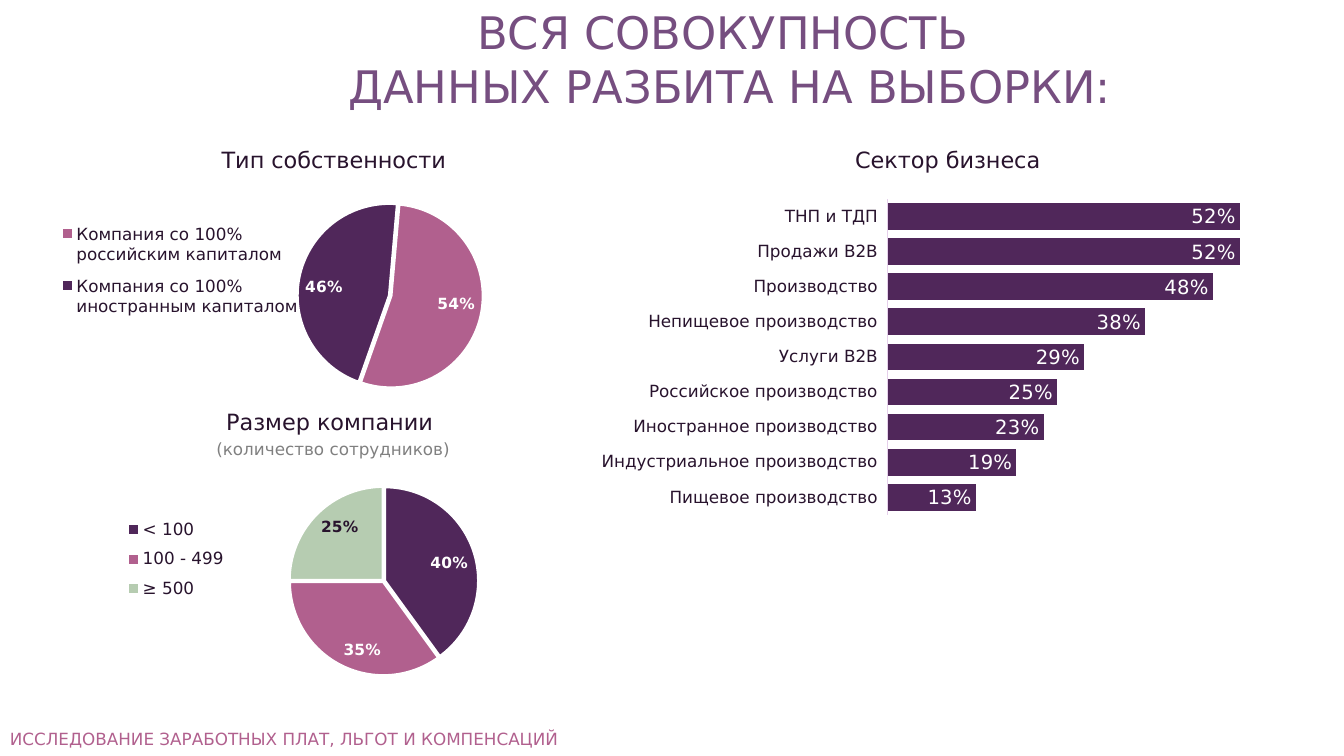
from pptx import Presentation
from pptx.chart.data import CategoryChartData
from pptx.dml.color import RGBColor
from pptx.enum.chart import XL_CHART_TYPE, XL_LABEL_POSITION, XL_LEGEND_POSITION, XL_TICK_LABEL_POSITION, XL_TICK_MARK
from pptx.enum.text import PP_ALIGN
from pptx.oxml import parse_xml
from pptx.oxml.ns import nsdecls
from pptx.util import Pt

FONT = "DejaVu Sans"
COLORS = {
    "title": "764E80",
    "text": "28132D",
    "note": "808080",
    "plum": "50275A",
    "rose": "B1608E",
    "sage": "B6CCB1",
    "axis": "E6D0EB",
    "white": "FFFFFF",
}
SECTORS = {
    "Пищевое производство": 0.13,
    "Индустриальное производство": 0.19,
    "Иностранное производство": 0.23,
    "Российское производство": 0.25,
    "Услуги B2B": 0.29,
    "Непищевое производство": 0.38,
    "Производство": 0.48,
    "Продажи В2В": 0.52,
    "ТНП и ТДП": 0.52,
}


def color(name):
    return RGBColor.from_string(COLORS[name])


def style_font(font, size, color_name, bold=False):
    font.name = FONT
    font.size = Pt(size)
    font.bold = bold
    font.color.rgb = color(color_name)


def add_text(slide, box, lines, align=PP_ALIGN.CENTER):
    """Add a text box; each line is (text, size, colour name)."""
    frame = slide.shapes.add_textbox(*map(Pt, box)).text_frame
    frame.word_wrap = True
    for number, (text, size, color_name) in enumerate(lines):
        paragraph = frame.add_paragraph() if number else frame.paragraphs[0]
        paragraph.text = text
        paragraph.alignment = align
        if number:
            paragraph.space_before = Pt(size * 0.2)
        for run in paragraph.runs:
            style_font(run.font, size, color_name)


def manual_layout(area, inner=False):
    """Return a layout element for an area given as fractions of the chart."""
    target = '<c:layoutTarget val="inner"/>' if inner else ""
    modes = '<c:xMode val="edge"/><c:yMode val="edge"/>'
    sizes = "".join(f'<c:{key} val="{value}"/>' for key, value in zip("xywh", area))
    return parse_xml(
        f'<c:layout {nsdecls("c")}><c:manualLayout>{target}{modes}{sizes}'
        "</c:manualLayout></c:layout>"
    )


def place_plot(chart, area):
    plot_area = chart.element.xpath("//c:plotArea")[0]
    for layout in plot_area.xpath("./c:layout"):
        plot_area.remove(layout)
    plot_area.insert(0, manual_layout(area, inner=True))


def place_legend(chart, area):
    chart.has_legend = True
    chart.legend.position = XL_LEGEND_POSITION.LEFT
    chart.legend.include_in_layout = False
    style_font(chart.legend.font, 12, "text")
    for layout in chart.element.xpath("//c:legend/c:layout"):
        layout.getparent().remove(layout)
    chart.element.xpath("//c:legend/c:legendPos")[0].addnext(manual_layout(area))


def add_chart(slide, kind, box, shares, plot_area):
    data = CategoryChartData(number_format="0%")
    data.categories = list(shares)
    data.add_series("Series 1", list(shares.values()))
    chart = slide.shapes.add_chart(kind, *map(Pt, box), data).chart
    chart.has_title = False
    chart.has_legend = False
    style_font(chart.font, 10, "text")
    place_plot(chart, plot_area)
    return chart


def label_values(series, size, bold):
    labels = series.data_labels
    labels.show_value = True
    labels.number_format = "0%"
    labels.number_format_is_linked = False
    labels.position = XL_LABEL_POSITION.INSIDE_END
    style_font(labels.font, size, "white", bold)


def add_pie(slide, box, shares, slice_colors, plot_area, legend_area, start=0):
    chart = add_chart(slide, XL_CHART_TYPE.PIE, box, shares, plot_area)
    place_legend(chart, legend_area)
    pie = chart.plots[0]
    pie.vary_by_categories = True
    series = pie.series[0]
    label_values(series, 11, bold=True)
    for number, slice_color in enumerate(slice_colors):
        point = series.points[number]
        point.format.fill.solid()
        point.format.fill.fore_color.rgb = color(slice_color)
        point.format.line.color.rgb = color("white")
        point.format.line.width = Pt(2)
        if slice_color == "sage":
            style_font(point.data_label.font, 11, "text", bold=True)
            point.data_label.position = XL_LABEL_POSITION.INSIDE_END
    chart.element.xpath("//c:ser/c:tx")[0].addnext(
        parse_xml(f'<c:explosion {nsdecls("c")} val="1"/>')
    )
    pie_element = chart.element.xpath("//c:pieChart")[0]
    for angle in pie_element.xpath("./c:firstSliceAng"):
        pie_element.remove(angle)
    pie_element.append(parse_xml(f'<c:firstSliceAng {nsdecls("c")} val="{start}"/>'))


def add_bars(slide, box, shares, plot_area):
    chart = add_chart(slide, XL_CHART_TYPE.BAR_CLUSTERED, box, shares, plot_area)
    bars = chart.plots[0]
    bars.vary_by_categories = False
    bars.gap_width = 31
    bars.overlap = -49
    series = bars.series[0]
    series.format.fill.solid()
    series.format.fill.fore_color.rgb = color("plum")
    label_values(series, 14, bold=False)

    sectors = chart.category_axis
    sectors.major_tick_mark = XL_TICK_MARK.NONE
    sectors.tick_label_position = XL_TICK_LABEL_POSITION.LOW
    sectors.has_major_gridlines = False
    sectors.format.line.color.rgb = color("axis")
    sectors.format.line.width = Pt(0.75)
    style_font(sectors.tick_labels.font, 12, "text")

    percents = chart.value_axis
    percents.minimum_scale = 0
    percents.maximum_scale = 0.6
    percents.has_major_gridlines = False
    percents.visible = False


def main():
    deck = Presentation()
    deck.slide_width, deck.slide_height = Pt(960), Pt(540)
    slide = deck.slides.add_slide(deck.slide_layouts[6])

    add_text(slide, (96.5, 0, 850, 46),
             [("ВСЯ СОВОКУПНОСТЬ \vДАННЫХ РАЗБИТА НА ВЫБОРКИ:", 32, "title")])
    add_text(slide, (80, 101, 317, 29), [("Тип собственности", 16, "text")])
    add_text(slide, (88, 288, 300, 60),
             [("Размер компании ", 16, "text"), ("(количество сотрудников)", 12, "note")])
    add_text(slide, (521, 101, 317, 29), [("Сектор бизнеса ", 16, "text")])
    add_text(slide, (0, 517, 870, 23),
             [("ИССЛЕДОВАНИЕ ЗАРАБОТНЫХ ПЛАТ, ЛЬГОТ И КОМПЕНСАЦИЙ", 12, "rose")],
             PP_ALIGN.LEFT)

    ownership = {
        "Компания со 100% российским капиталом": 0.54,
        "Компания со 100% иностранным капиталом": 0.46,
    }
    add_pie(slide, (39, 137.5, 345, 147.5), ownership, ("rose", "plum"),
            (0.48, 0.05, 0.43, 0.9), (0.01, 0.1, 0.5, 0.56), start=5)

    headcount = {"< 100": 0.4, "100 - 499": 0.35, "≥ 500": 0.25}
    add_pie(slide, (62, 330, 412, 173.5), headcount, ("plum", "rose", "sage"),
            (0.35, 0.1, 0.33, 0.78), (0.06, 0.2, 0.19, 0.4))

    add_bars(slide, (425.5, 137.5, 509, 235), SECTORS, (0.41, 0.02, 0.57, 0.96))

    deck.save("out.pptx")


if __name__ == "__main__":
    main()
